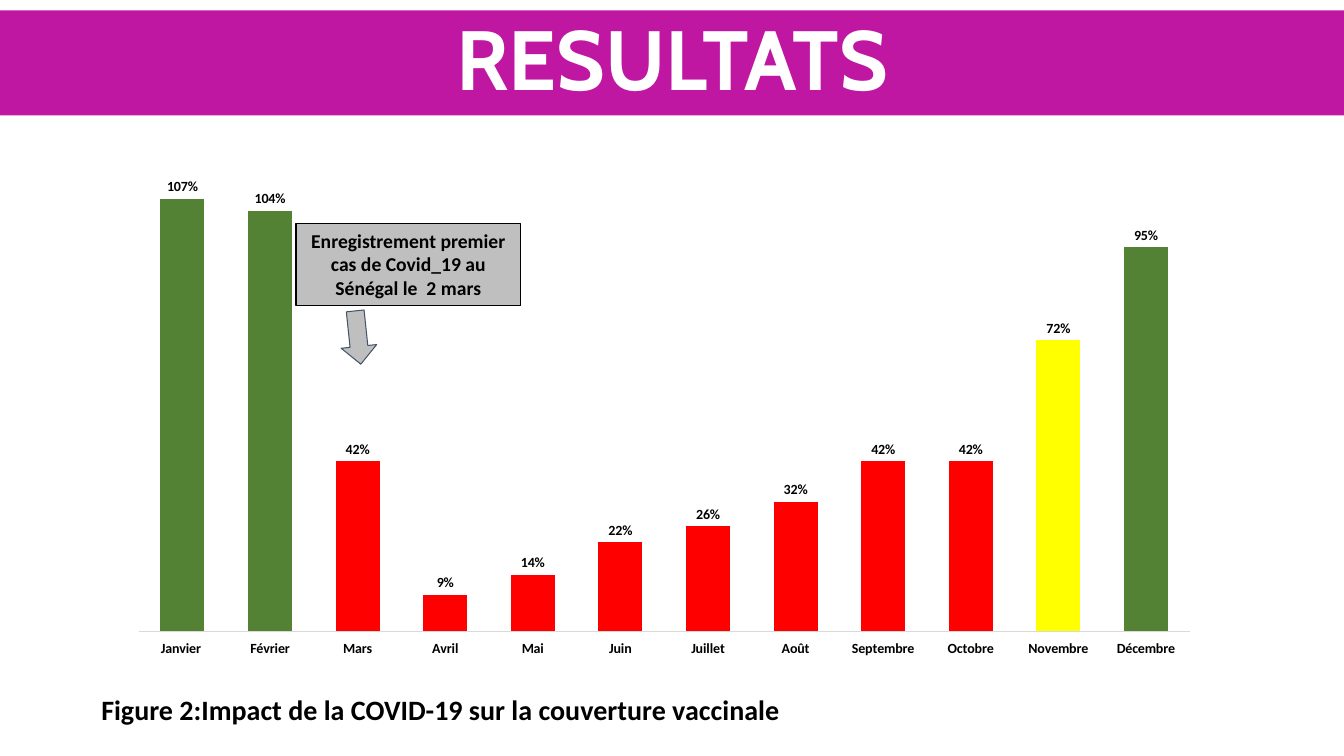
from dataclasses import dataclass, field

from lxml.etree import SubElement
from pptx import Presentation
from pptx.chart.data import CategoryChartData as Data
from pptx.dml.color import RGBColor as Rgb
from pptx.enum.chart import XL_CHART_TYPE as Kind
from pptx.enum.chart import XL_LABEL_POSITION as Spot
from pptx.enum.chart import XL_TICK_LABEL_POSITION as Place
from pptx.enum.chart import XL_TICK_MARK as Tick
from pptx.enum.shapes import MSO_SHAPE as Form
from pptx.enum.text import MSO_ANCHOR as Anchor
from pptx.enum.text import PP_ALIGN as Align
from pptx.oxml.ns import qn
from pptx.util import Pt

SCALE = 9525
COLORS = {
    "band": "C017A3",
    "white": "FFFFFF",
    "black": "000000",
    "grey": "BFBFBF",
    "slate": "44546A",
    "rule": "D9D9D9",
    "blue": "4472C4",
    "high": "548235",
    "mid": "FFFF00",
    "low": "FF0000",
}
RATES = {
    "Janvier ": 1.07,
    "Février": 1.04,
    "Mars": 0.42,
    "Avril": 0.09,
    "Mai": 0.14,
    "Juin": 0.22,
    "Juillet": 0.26,
    "Août": 0.32,
    "Septembre": 0.42,
    "Octobre": 0.42,
    "Novembre": 0.72,
    "Décembre": 0.95,
}
PLOT = {"x": 0.023, "y": 0.037, "w": 0.958, "h": 0.896}


@dataclass
class Box:
    area: tuple[int, int, int, int]
    text: str = ""
    size: int = 14
    face: str = "Calibri"
    ink: str = "black"
    fill: str = ""
    line: str = ""
    width: float = 1
    form: Form = Form.RECTANGLE
    turn: int = 0
    frame: dict = field(default_factory=dict)
    para: dict = field(default_factory=dict)


BOXES = [
    Box((0, 10, 1280, 100), "RESULTATS", 60, "Cabin", "white", "band",
        frame={"vertical_anchor": Anchor.MIDDLE},
        para={"alignment": Align.CENTER, "line_spacing": 0.9}),
    Box((87, 655, 1067, 42),
        "Figure 2:Impact de la COVID-19 sur la couverture vaccinale", 20,
        frame={"vertical_anchor": Anchor.TOP},
        para={"alignment": Align.LEFT}),
    Box((282, 213, 214, 78),
        "Enregistrement premier cas de Covid_19 au Sénégal le  2 mars",
        fill="grey", line="black",
        frame={"vertical_anchor": Anchor.TOP},
        para={"alignment": Align.CENTER}),
    Box((324, 296, 34, 51), fill="grey", line="slate", width=0.75,
        form=Form.DOWN_ARROW, turn=354),
]


def px(n: int) -> int:
    return n * SCALE


def tint(name: str) -> Rgb:
    return Rgb.from_string(COLORS[name])


def assign(item: object, values: dict) -> None:
    for name, value in values.items():
        setattr(item, name, value)


def paint(fill, name: str) -> None:
    if name:
        fill.solid()
        fill.fore_color.rgb = tint(name)
    else:
        fill.background()


def style(font, size: int, face: str = "Calibri", ink: str = "black") -> None:
    assign(font, {"size": Pt(size), "name": face, "bold": True})
    font.color.rgb = tint(ink)


def draw(slide, box: Box) -> None:
    shape = slide.shapes.add_shape(box.form, *map(px, box.area))
    shape.rotation = box.turn
    shape.shadow.inherit = False
    paint(shape.fill, box.fill)
    paint(shape.line.fill, box.line)
    if box.line:
        shape.line.width = Pt(box.width)
    if box.text:
        frame = shape.text_frame
        assign(frame, {"word_wrap": True} | box.frame)
        para = frame.paragraphs[0]
        assign(para, box.para)
        run = para.add_run()
        run.text = box.text
        style(run.font, box.size, box.face, box.ink)


def grade(rate: float) -> str:
    return "high" if rate >= 0.9 else "mid" if rate >= 0.5 else "low"


def place(chart) -> None:
    area = chart.element.find(".//" + qn("c:plotArea"))
    outer = area.find(qn("c:layout"))
    if outer is None:
        outer = SubElement(area, qn("c:layout"))
        area.insert(0, outer)
    inner = SubElement(outer, qn("c:manualLayout"))
    modes = {"layoutTarget": "inner", "xMode": "edge", "yMode": "edge"}
    for name, value in (modes | PLOT).items():
        SubElement(inner, qn("c:" + name)).set("val", str(value))


def graph(slide) -> None:
    data = Data(number_format="0%")
    data.categories = list(RATES)
    data.add_series("Series 1", list(RATES.values()))
    area = map(px, (108, 120, 1045, 516))
    chart = slide.shapes.add_chart(Kind.COLUMN_CLUSTERED, *area, data).chart
    assign(chart, {"has_legend": False, "has_title": False})
    style(chart.font, 10)
    place(chart)

    months = chart.category_axis
    assign(months, {"major_tick_mark": Tick.NONE,
                    "minor_tick_mark": Tick.NONE,
                    "tick_label_position": Place.LOW,
                    "has_major_gridlines": False})
    style(months.tick_labels.font, 10)
    paint(months.format.line.fill, "rule")
    months.format.line.width = Pt(0.75)
    assign(chart.value_axis, {"minimum_scale": 0, "maximum_scale": 1.2,
                              "has_major_gridlines": False,
                              "visible": False})

    plot = chart.plots[0]
    assign(plot, {"gap_width": 99, "overlap": -27,
                  "vary_by_categories": False})
    bars = plot.series[0]
    paint(bars.format.fill, "blue")
    for i, rate in enumerate(RATES.values()):
        paint(bars.points[i].format.fill, grade(rate))
    labels = bars.data_labels
    assign(labels, {"show_value": True, "number_format": "0%",
                    "number_format_is_linked": False,
                    "position": Spot.OUTSIDE_END})
    style(labels.font, 10)


def main() -> None:
    deck = Presentation()
    assign(deck, {"slide_width": px(1280), "slide_height": px(720)})
    slide = deck.slides.add_slide(deck.slide_layouts[6])
    title, legend, *notes = BOXES
    draw(slide, title)
    draw(slide, legend)
    graph(slide)
    for note in notes:
        draw(slide, note)
    deck.save("out.pptx")


if __name__ == "__main__":
    main()
